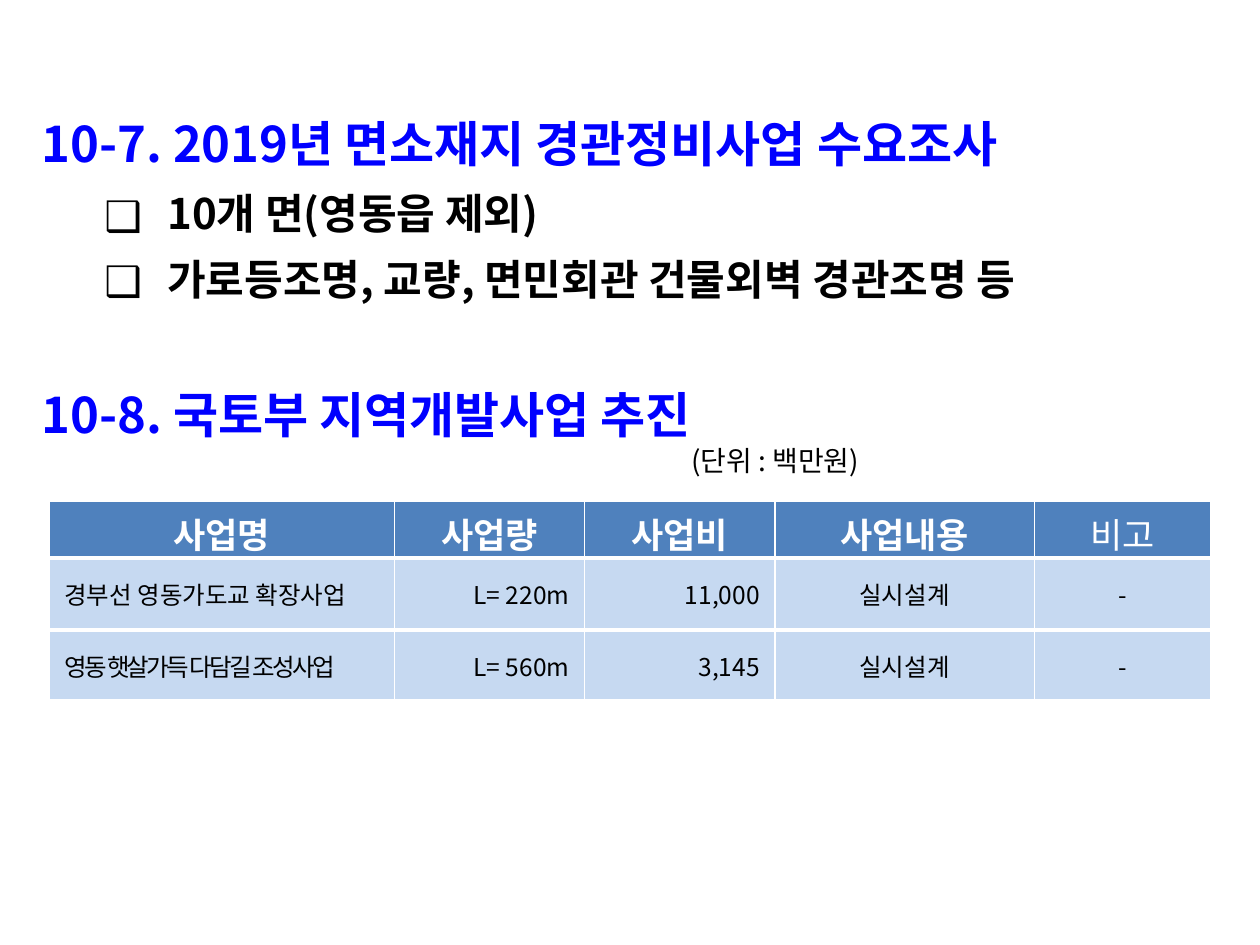
"""Build the slide on the 2019 landscape survey and regional development projects."""
from lxml.etree import SubElement
from pptx import Presentation
from pptx.dml.color import RGBColor
from pptx.enum.text import MSO_ANCHOR as Anchor, PP_ALIGN as Align
from pptx.oxml.ns import qn
from pptx.util import Inches, Pt

FONT = "Noto Sans CJK KR"
BLUE = RGBColor(0x00, 0x00, 0xFF)
BLACK = RGBColor(0x00, 0x00, 0x00)
WHITE = RGBColor(0xFF, 0xFF, 0xFF)
HEADER_FILL = RGBColor(0x4F, 0x81, 0xBD)
BODY_FILL = RGBColor(0xC6, 0xD9, 0xF1)

SURVEY_HEADING = "10-7. 2019년 면소재지 경관정비사업 수요조사"
SURVEY_POINTS = ["10개 면(영동읍 제외)", "가로등조명, 교량, 면민회관 건물외벽 경관조명 등"]
PROJECT_HEADING = "10-8. 국토부 지역개발사업 추진"
UNIT_NOTE = "(단위 : 백만원)"
PROJECTS = [
    ["사업명", "사업량", "사업비", "사업내용", "비고"],
    ["경부선 영동가도교 확장사업", "L= 220m", "11,000", "실시설계", "-"],
    ["영동 햇살가득 다담길 조성사업", "L= 560m", "3,145", "실시설계", "-"],
]
COLUMN_WIDTHS = [2.74, 1.51, 1.51, 2.06, 1.4]
ROW_HEIGHTS = [0.45, 0.57, 0.57]
BODY_ALIGNS = [Align.LEFT, Align.RIGHT, Align.RIGHT, Align.CENTER, Align.CENTER]
TIGHT_CELL = (2, 0)


def add_span(para, text, size, color, bold=False):
    span = para.add_run()
    span.text = text
    font = span.font
    font.size, font.bold, font.name = Pt(size), bold, FONT
    font.color.rgb = color
    SubElement(font._element, qn("a:ea"), typeface=FONT)
    return span


def indent(para, left, first=0.0):
    properties = para._p.get_or_add_pPr()
    properties.set("marL", str(Inches(left)))
    properties.set("indent", str(Inches(first)))
    return properties


def add_box(page, left, top, width, height, wrap):
    box = page.shapes.add_textbox(Inches(left), Inches(top), Inches(width), Inches(height))
    box.text_frame.word_wrap = wrap
    return box.text_frame


def add_survey(page):
    frame = add_box(page, 0.23, 0.62, 9.61, 1.95, False)
    heading = frame.paragraphs[0]
    indent(heading, 0.58, -0.58)
    heading.line_spacing = 1.5
    add_span(heading, SURVEY_HEADING, 28, BLUE, True)
    for point in SURVEY_POINTS:
        para = frame.add_paragraph()
        para.level = 1
        properties = indent(para, 1, -0.5)
        SubElement(properties, qn("a:buFont"), typeface=FONT)
        SubElement(properties, qn("a:buChar"), char="❑")
        para.line_spacing = 1.3
        add_span(para, point, 24, BLACK, True)


def add_project_heading(page):
    frame = add_box(page, 0.23, 2.97, 9.45, 0.9, True)
    frame.vertical_anchor = Anchor.MIDDLE
    add_span(frame.paragraphs[0], PROJECT_HEADING, 28, BLUE, True)
    note = frame.add_paragraph()
    indent(note, 5.16)
    add_span(note, UNIT_NOTE, 16, BLACK)


def set_borders(cell, header):
    properties = cell._tc.get_or_add_tcPr()
    widths = {"lnL": 1, "lnR": 1, "lnT": 1 if header else 3, "lnB": 3}
    for place, (side, width) in enumerate(widths.items()):
        line = SubElement(properties, qn(f"a:{side}"), w=str(Pt(width)))
        fill = SubElement(line, qn("a:solidFill"))
        SubElement(fill, qn("a:srgbClr"), val=str(WHITE))
        properties.insert(place, line)


def add_projects(page):
    table = page.shapes.add_table(
        len(PROJECTS), len(COLUMN_WIDTHS), Inches(0.39), Inches(3.98),
        Inches(sum(COLUMN_WIDTHS)), Inches(sum(ROW_HEIGHTS))).table
    for column, width in zip(table.columns, COLUMN_WIDTHS):
        column.width = Inches(width)
    for row, height in zip(table.rows, ROW_HEIGHTS):
        row.height = Inches(height)
    for r, texts in enumerate(PROJECTS):
        header = r == 0
        for c, text in enumerate(texts):
            cell = table.cell(r, c)
            cell.vertical_anchor = Anchor.MIDDLE
            cell.fill.solid()
            cell.fill.fore_color.rgb = HEADER_FILL if header else BODY_FILL
            set_borders(cell, header)
            para = cell.text_frame.paragraphs[0]
            if header:
                para.alignment = Align.CENTER
                add_span(para, text, 20, WHITE, c < len(texts) - 1)
                continue
            cell.margin_left = cell.margin_right = Inches(0.12)
            para.alignment = BODY_ALIGNS[c]
            span = add_span(para, text, 14, BLACK)
            if (r, c) == TIGHT_CELL:
                span.font._element.set("spc", "-150")


def main():
    deck = Presentation()
    deck.slide_width, deck.slide_height = Inches(10), Inches(7.5)
    page = deck.slides.add_slide(deck.slide_layouts[6])
    add_survey(page)
    add_project_heading(page)
    add_projects(page)
    deck.save("out.pptx")


if __name__ == "__main__":
    main()
